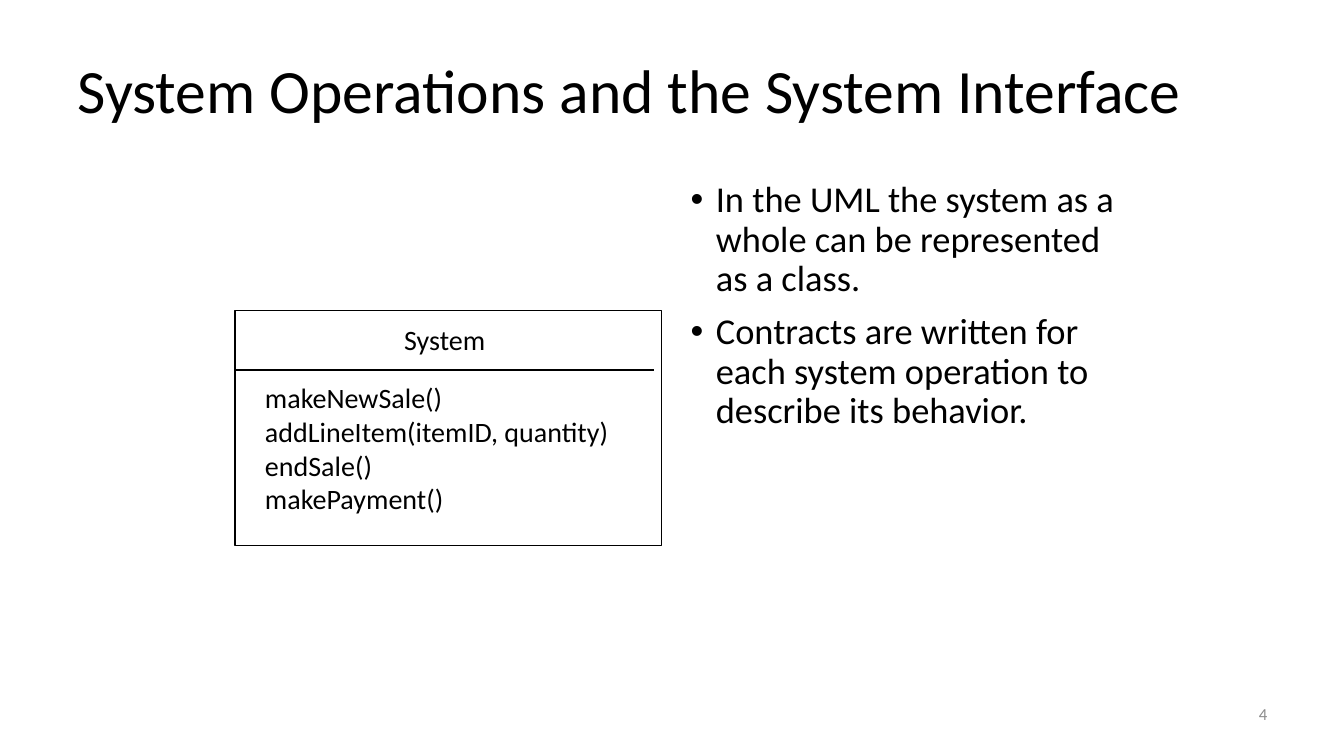
"""Build a slide on system operations beside a UML class box."""
import dataclasses
import typing

import pptx
import pptx.dml.color
import pptx.enum.shapes
import pptx.enum.text
import pptx.oxml
import pptx.oxml.ns
import pptx.util

Inches = pptx.util.Inches
Pt = pptx.util.Pt
RGBColor = pptx.dml.color.RGBColor
Align = pptx.enum.text.PP_ALIGN
Anchor = pptx.enum.text.MSO_ANCHOR

BLACK = RGBColor(0x00, 0x00, 0x00)
WHITE = RGBColor(0xFF, 0xFF, 0xFF)
GRAY = RGBColor(0x8C, 0x8C, 0x8C)
BULLET_INDENT = Inches(0.25)


@dataclasses.dataclass
class TextBlock:
    left: float
    top: float
    width: float
    height: float
    lines: list[str]
    size: int
    color: RGBColor = BLACK
    frame_format: dict[str, typing.Any] = dataclasses.field(default_factory=dict)
    para_format: dict[str, typing.Any] = dataclasses.field(default_factory=dict)

    def bounds(self) -> list[int]:
        return [Inches(side) for side in (self.left, self.top, self.width, self.height)]


LABEL_FORMAT = {"word_wrap": False, "auto_size": pptx.enum.text.MSO_AUTO_SIZE.SHAPE_TO_FIT_TEXT}
HOLDER_FORMAT = {"word_wrap": True, "auto_size": pptx.enum.text.MSO_AUTO_SIZE.NONE}

TITLE = TextBlock(
    0.67, 0.3, 12, 1.25, ["System Operations and the System Interface"], 44,
    frame_format=HOLDER_FORMAT | {"vertical_anchor": Anchor.MIDDLE},
    para_format={"alignment": Align.LEFT, "line_spacing": 0.9})
BODY = TextBlock(
    6.75, 1.75, 4.41, 4.95,
    ["In the UML the system as a whole can be represented as a class.",
     "Contracts are written for each system operation to describe its behavior."], 26,
    frame_format=HOLDER_FORMAT | {"vertical_anchor": Anchor.TOP},
    para_format={"alignment": Align.LEFT, "line_spacing": 0.9, "space_before": Pt(10)})
LABELS = [
    TextBlock(9.56, 6.83, 3.11, 0.5, ["4"], 12, GRAY,
              HOLDER_FORMAT | {"vertical_anchor": Anchor.MIDDLE}, {"alignment": Align.RIGHT}),
    TextBlock(3.91, 3.15, 1.02, 0.44, ["System"], 20, frame_format=LABEL_FORMAT),
    TextBlock(2.53, 3.73, 3.64, 1.45,
              ["makeNewSale()", "addLineItem(itemID, quantity)", "endSale()", "makePayment()"],
              20, frame_format=LABEL_FORMAT),
]


def apply_format(target: typing.Any, values: dict[str, typing.Any]) -> None:
    for name, value in values.items():
        setattr(target, name, value)


def write_text(box: typing.Any, block: TextBlock) -> None:
    frame = box.text_frame
    frame.text = "\n".join(block.lines)
    apply_format(frame, block.frame_format)
    for para in frame.paragraphs:
        apply_format(para, block.para_format)
        for span in para.runs:
            apply_format(span.font, {"name": "Calibri", "size": Pt(block.size)})
            span.font.color.rgb = block.color


def fill_placeholder(holder: typing.Any, block: TextBlock) -> None:
    apply_format(holder, dict(zip(("left", "top", "width", "height"), block.bounds())))
    write_text(holder, block)


def add_bullets(box: typing.Any) -> None:
    for para in box.text_frame.paragraphs:
        properties = para._p.get_or_add_pPr()
        properties.set("marL", str(BULLET_INDENT))
        properties.set("indent", str(-BULLET_INDENT))
        for tag, name, value in (("buFont", "typeface", "Arial"), ("buChar", "char", "•")):
            properties.append(pptx.oxml.parse_xml(
                f'<a:{tag} {pptx.oxml.ns.nsdecls("a")} {name}="{value}"/>'))


def style_line(line: typing.Any) -> None:
    line.color.rgb = BLACK
    line.width = Pt(1)


def draw_class_box(page: typing.Any) -> None:
    box = page.shapes.add_shape(
        pptx.enum.shapes.MSO_SHAPE.RECTANGLE,
        Inches(2.33), Inches(3.08), Inches(4.23), Inches(2.33))
    box.shadow.inherit = False
    box.fill.solid()
    box.fill.fore_color.rgb = WHITE
    style_line(box.line)


def draw_divider(page: typing.Any) -> None:
    divider = page.shapes.add_connector(
        pptx.enum.shapes.MSO_CONNECTOR.STRAIGHT,
        Inches(2.33), Inches(3.67), Inches(6.49), Inches(3.67))
    style_line(divider.line)
    divider._element.spPr.append(
        pptx.oxml.parse_xml(f'<a:effectLst {pptx.oxml.ns.nsdecls("a")}/>'))


def main() -> None:
    deck = pptx.Presentation()
    deck.slide_width, deck.slide_height = Inches(13.33), Inches(7.5)
    page = deck.slides.add_slide(deck.slide_layouts[1])
    fill_placeholder(page.shapes.title, TITLE)
    body = page.placeholders[1]
    fill_placeholder(body, BODY)
    add_bullets(body)
    draw_class_box(page)
    for label in LABELS:
        write_text(page.shapes.add_textbox(*label.bounds()), label)
    draw_divider(page)
    deck.save("out.pptx")


if __name__ == "__main__":
    main()
